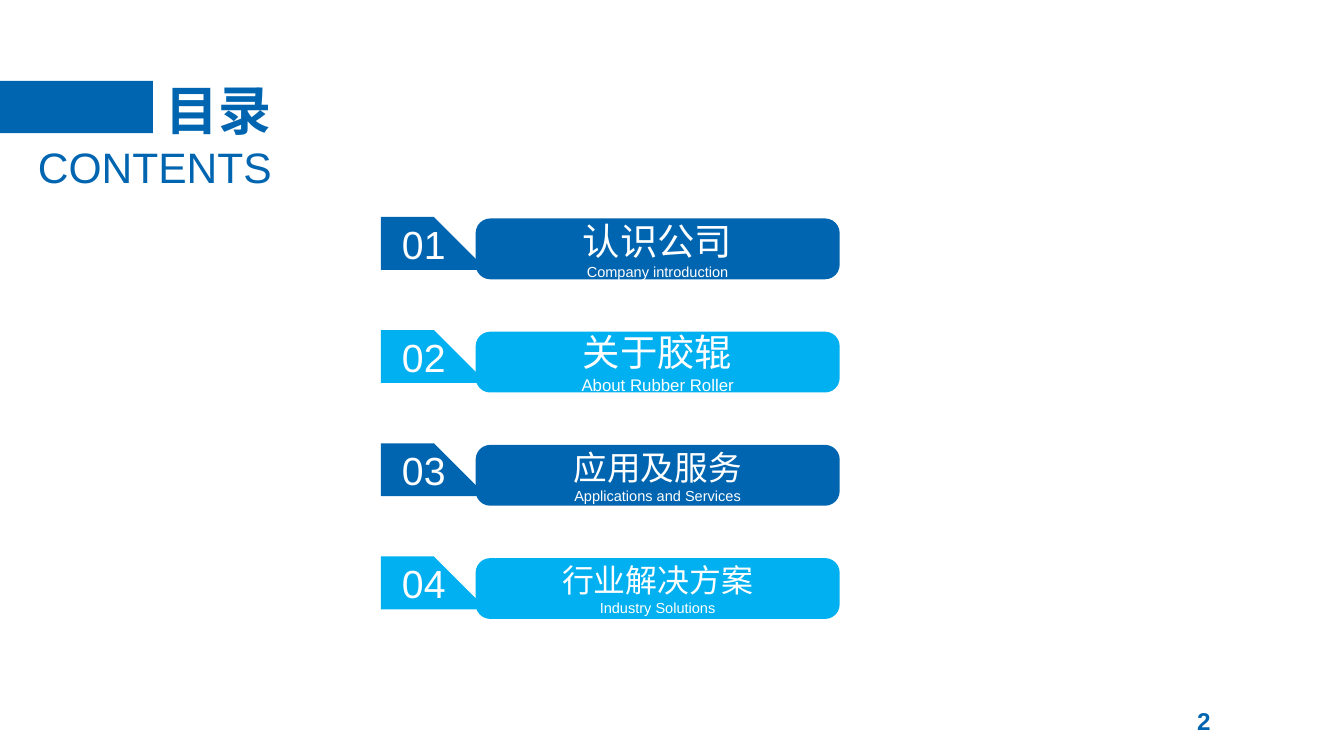
import math

import pptx
import pptx.dml.color
import pptx.enum.shapes
import pptx.enum.text
import pptx.util

Cm = pptx.util.Cm
Pt = pptx.util.Pt
ALIGN = pptx.enum.text.PP_ALIGN
ANCHOR = pptx.enum.text.MSO_ANCHOR
SHAPE = pptx.enum.shapes.MSO_SHAPE

WHITE = pptx.dml.color.RGBColor(0xFF, 0xFF, 0xFF)
DARK_BLUE = pptx.dml.color.RGBColor(0x00, 0x65, 0xB0)
LIGHT_BLUE = pptx.dml.color.RGBColor(0x00, 0xB0, 0xF0)

FIRST_TOP = 4.1
ROW_PITCH = 2.14
SECTIONS = [
    ("认识公司", 20, "Company introduction", 7.8),
    ("关于胶辊", 20, "About Rubber Roller", 9),
    ("应用及服务", 18, "Applications and Services", 7.8),
    ("行业解决方案", 17.1, "Industry Solutions", 7.8),
]


def fill_text(shape, lines, color, align, insets=(0, 0, 0, 0), bold=False,
              anchor=ANCHOR.MIDDLE, fit=pptx.enum.text.MSO_AUTO_SIZE.NONE):
    frame = shape.text_frame
    frame_format = {"word_wrap": True, "auto_size": fit, "vertical_anchor": anchor}
    for side, inset in zip(("left", "top", "right", "bottom"), insets):
        frame_format[f"margin_{side}"] = Cm(inset)
    for name, value in frame_format.items():
        setattr(frame, name, value)
    for index, (text, size) in enumerate(lines):
        para = frame.add_paragraph() if index else frame.paragraphs[0]
        para.alignment = align
        span = para.add_run()
        span.text = text
        for name, value in {"name": "Arial", "size": Pt(size), "bold": bold}.items():
            setattr(span.font, name, value)
        span.font.color.rgb = color


def paint(shape, color):
    shape.shadow.inherit = False
    shape.fill.solid()
    shape.fill.fore_color.rgb = color
    shape.line.fill.background()


def add_block(page, kind, left, top, width, height, color):
    block = page.shapes.add_shape(kind, Cm(left), Cm(top), Cm(width), Cm(height))
    paint(block, color)
    return block


def add_text(page, left, top, width, height, text, size, **options):
    box = page.shapes.add_textbox(Cm(left), Cm(top), Cm(width), Cm(height))
    fill_text(box, [(text, size)], DARK_BLUE, ALIGN.RIGHT, **options)


def corner(center_x, center_y, radius, start):
    angles = [math.radians(start + step * 15) for step in range(7)]
    return [(center_x + radius * math.cos(angle), center_y + radius * math.sin(angle))
            for angle in angles]


def add_number_tag(page, left, top, number, color):
    width, height, radius, tip = 1.3, 1.2, 0.19, 1.58
    far_x, far_y = width - radius, height - radius
    points = (corner(radius, radius, radius, 180)
              + corner(far_x, radius, radius, 270)
              + [(width, 0.38), (tip, 0.61), (width, 0.83)]
              + corner(far_x, far_y, radius, 0)
              + corner(radius, far_y, radius, 90))
    builder = page.shapes.build_freeform(*points[0], scale=Cm(1))
    builder.add_line_segments(points[1:], close=True)
    tag = builder.convert_to_shape(Cm(left), Cm(top))
    paint(tag, color)
    fill_text(tag, [(number, 21)], WHITE, ALIGN.CENTER, insets=(0, 0.1, 0.38, 0.1))


def add_section(page, index, title, title_size, subtitle, subtitle_size):
    color = LIGHT_BLUE if index % 2 else DARK_BLUE
    top = FIRST_TOP + index * ROW_PITCH
    bar = add_block(page, SHAPE.ROUNDED_RECTANGLE, 8.99, top + 0.03, 6.88, 1.15, color)
    bar.adjustments[0] = 0.24
    fill_text(bar, [(title, title_size), (subtitle, subtitle_size)], WHITE, ALIGN.CENTER)
    add_number_tag(page, 7.2, top, f"{index + 1:02d}", color)


def add_heading(page):
    grow = pptx.enum.text.MSO_AUTO_SIZE.SHAPE_TO_FIT_TEXT
    add_block(page, SHAPE.RECTANGLE, 0, 1.53, 2.89, 0.99, DARK_BLUE)
    add_text(page, 2.89, 1.45, 2.25, 1.22, "目录", 28.4, bold=True, fit=grow)
    add_text(page, 0, 2.67, 5.14, 0.97, "CONTENTS", 22.8, anchor=ANCHOR.TOP, fit=grow)


def main():
    deck = pptx.Presentation()
    deck.slide_width, deck.slide_height = Cm(25.4), Cm(14.29)
    page = deck.slides.add_slide(deck.slide_layouts[6])
    for index, section in enumerate(SECTIONS):
        add_section(page, index, *section)
    add_heading(page)
    add_text(page, 19.3, 13.23, 3.86, 0.79, "2", 13, bold=True,
             insets=(0.28, 0.15, 0.28, 0.15))
    deck.save("out.pptx")


if __name__ == "__main__":
    main()
